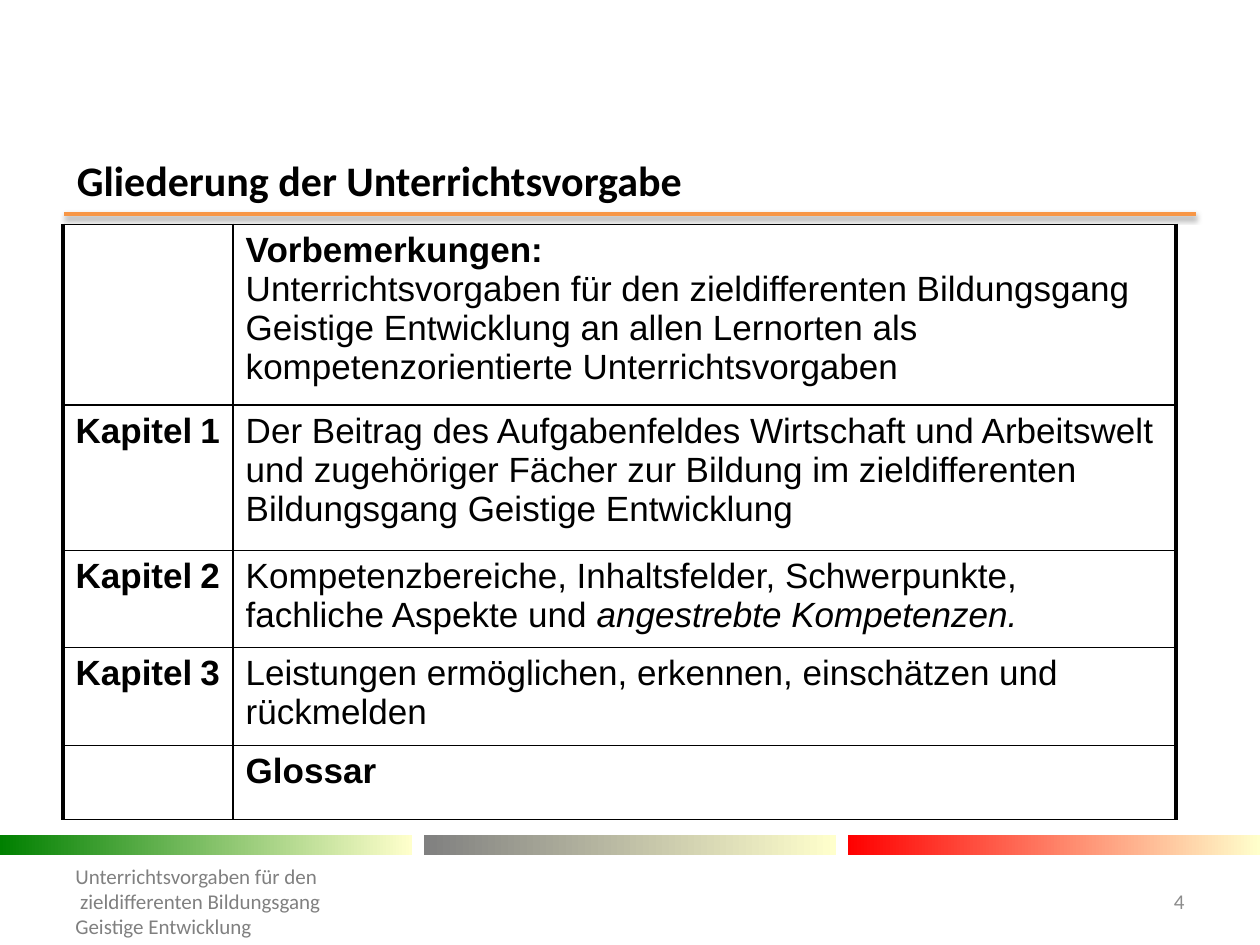
"""Build the slide that outlines the chapters of the curriculum guidelines."""
from lxml.etree import SubElement
from pptx import Presentation
from pptx.dml.color import RGBColor
from pptx.enum.shapes import MSO_CONNECTOR as Connector, MSO_SHAPE as Shape
from pptx.enum.text import MSO_ANCHOR as Anchor, PP_ALIGN as Align
from pptx.oxml.ns import qn
from pptx.util import Pt

BLACK = RGBColor(0x00, 0x00, 0x00)
ORANGE = RGBColor(0xF7, 0x96, 0x46)
GREEN = RGBColor(0x00, 0x80, 0x00)
GRAY = RGBColor(0x80, 0x80, 0x80)
RED = RGBColor(0xFF, 0x00, 0x00)
CREAM = RGBColor(0xFF, 0xFF, 0xCC)
NUMBER_GRAY = RGBColor(0x8C, 0x8C, 0x8C)


def add_span(para, text, font, size, color, bold=False, italic=False):
    span = para.add_run()
    span.text = text
    span.font.name = font
    span.font.size = Pt(size)
    span.font.color.rgb = color
    span.font.bold = bold
    span.font.italic = italic


def add_border(cell, side, width):
    line = SubElement(cell._tc.get_or_add_tcPr(), qn(f"a:ln{side}"), w=str(Pt(width)))
    fill = SubElement(line, qn("a:solidFill"))
    SubElement(fill, qn("a:srgbClr"), val=str(BLACK))


deck = Presentation()
deck.slide_width, deck.slide_height = Pt(720), Pt(540)
page = deck.slides.add_slide(deck.slide_layouts[5])
shapes = page.shapes

rule = shapes.add_connector(Connector.STRAIGHT, Pt(36.72), Pt(122.4), Pt(683.28), Pt(122.4))
rule.line.color.rgb = ORANGE
rule.line.width = Pt(2)
effects = SubElement(rule._element.spPr, qn("a:effectLst"))
shadow = SubElement(effects, qn("a:outerShdw"), blurRad=str(Pt(3.1)), dist=str(Pt(1.6)),
                    dir="5400000", rotWithShape="0")
shadow_color = SubElement(shadow, qn("a:srgbClr"), val=str(BLACK))
SubElement(shadow_color, qn("a:alpha"), val="38000")

for index, color in enumerate((GREEN, GRAY, RED)):
    bar = shapes.add_shape(Shape.RECTANGLE, Pt(index * 242.25), Pt(477.2), Pt(235.5), Pt(11.5))
    bar.shadow.inherit = False
    bar.line.fill.background()
    bar.fill.gradient()
    bar.fill.gradient_angle = 0
    for stop, stop_color in zip(bar.fill.gradient_stops, (color, CREAM)):
        stop.color.rgb = stop_color

title = shapes.title
title.left, title.top, title.width, title.height = Pt(36.72), Pt(88.56), Pt(648), Pt(28)
title.text_frame.vertical_anchor = Anchor.MIDDLE
title_para = title.text_frame.paragraphs[0]
title_para.alignment = Align.LEFT
add_span(title_para, "Gliederung der Unterrichtsvorgabe", "Calibri", 24, BLACK, bold=True)

footer_lines = ["Unterrichtsvorgaben für den", " zieldifferenten Bildungsgang", "Geistige Entwicklung"]
for left, width, align, color, lines in (
    (36, 414.72, Align.LEFT, GRAY, footer_lines),
    (638, 46, Align.RIGHT, NUMBER_GRAY, ["4"]),
):
    frame = shapes.add_textbox(Pt(left), Pt(500.5), Pt(width), Pt(28.75)).text_frame
    frame.word_wrap = True
    frame.vertical_anchor = Anchor.MIDDLE
    for index, text in enumerate(lines):
        para = frame.add_paragraph() if index else frame.paragraphs[0]
        para.alignment = align
        add_span(para, text, "Calibri", 12, color)

chapters = [
    (101.5, "", [("Vorbemerkungen: ", "bold"), ("\n", ""),
                 ("Unterrichtsvorgaben für den zieldifferenten Bildungsgang Geistige Entwicklung "
                  "an allen Lernorten als kompetenzorientierte Unterrichtsvorgaben", "")]),
    (83, "1", [("Der Beitrag des Aufgabenfeldes Wirtschaft und Arbeitswelt und zugehöriger "
                "Fächer zur Bildung im zieldifferenten Bildungsgang Geistige Entwicklung", "")]),
    (55.5, "2", [("Kompetenzbereiche, Inhaltsfelder, Schwerpunkte, fachliche Aspekte und ", ""),
                 ("angestrebte Kompetenzen.", "italic")]),
    (56, "3", [("Leistungen ermöglichen, erkennen, einschätzen und rückmelden", "")]),
    (42.5, "", [("Glossar", "bold")]),
]
table = shapes.add_table(len(chapters), 2, Pt(36), Pt(128.2), Pt(636), Pt(338.5)).table
table.first_row = table.horz_banding = False
table.columns[0].width, table.columns[1].width = Pt(97.25), Pt(538.75)

for row, (height, number, content) in enumerate(chapters):
    table.rows[row].height = Pt(height)
    label, body = table.cell(row, 0), table.cell(row, 1)
    for cell, outer_side in ((label, "L"), (body, "R")):
        for side in "LRTB":
            add_border(cell, side, 2.25 if side == outer_side else 1)
        cell.fill.background()
    if number:
        for text, size in (("Kapitel", 20), (" ", 16), (number, 20)):
            add_span(label.text_frame.paragraphs[0], text, "Arial", size, BLACK, bold=True)
    para = body.text_frame.paragraphs[0]
    for text, style in content:
        if text == "\n":
            para.add_line_break()
        else:
            add_span(para, text, "Arial", 20, BLACK, style == "bold", style == "italic")

deck.save("out.pptx")
